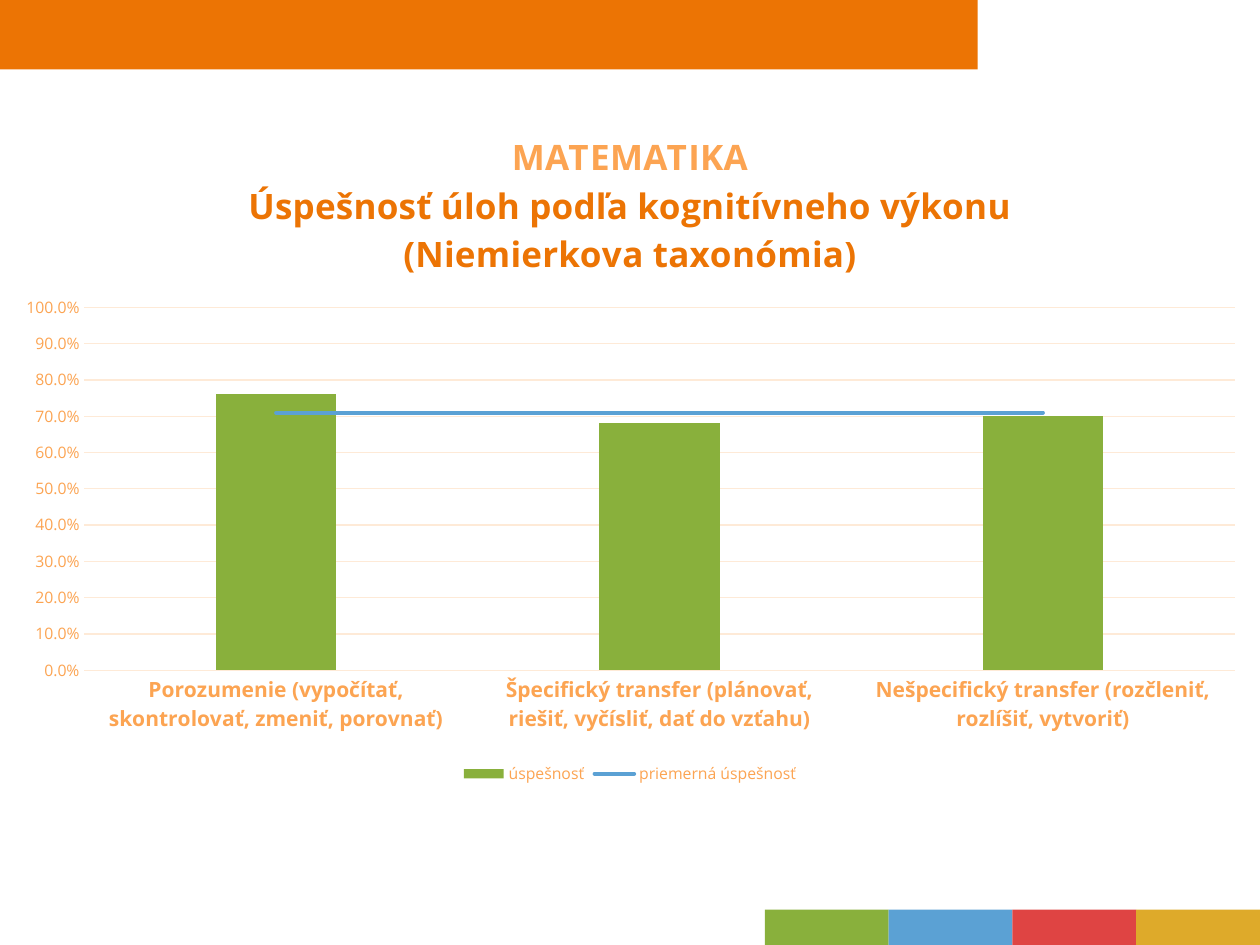
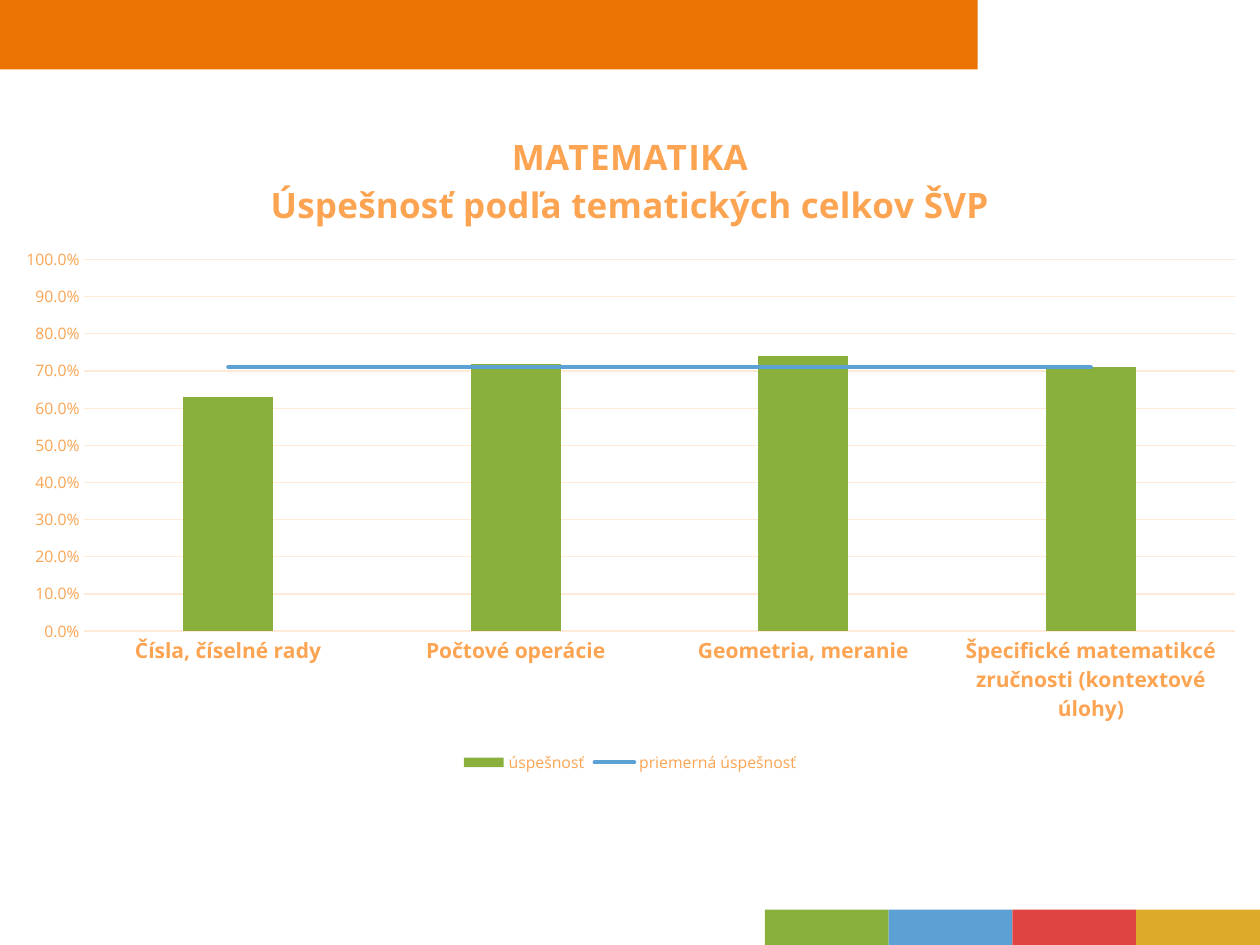
from lxml import etree
from pptx import Presentation
from pptx import util as u
from pptx.chart.data import CategoryChartData
from pptx.dml.color import RGBColor
from pptx.enum import chart as charts
from pptx.enum import shapes
from pptx.oxml import parse_xml
from pptx.oxml.ns import nsdecls, qn

COLORS = {
    "orange": "EC7404",
    "peach": "FCA452",
    "grid": "FEEAD7",
    "green": "89B03C",
    "blue": "5BA1D4",
    "red": "DF4443",
    "yellow": "DEAA2A",
}
FONT = "Open Sans"
PLOT_LEFT, PLOT_WIDTH = 0.67, 9.13
AVERAGE = 0.71

SLIDES = [
    {
        "box": (0, 0.84, 10, 5.43),
        "plot": (2.44, 2.88),
        "title": [("MATEMATIKA", "peach"),
                  ("Úspešnosť úloh podľa kognitívneho výkonu (Niemierkova taxonómia)", "orange")],
        "success": {
            "Porozumenie (vypočítať, skontrolovať, zmeniť, porovnať)": 0.76,
            "Špecifický transfer (plánovať, riešiť, vyčísliť, dať do vzťahu)": 0.68,
            "Nešpecifický transfer (rozčleniť, rozlíšiť, vytvoriť)": 0.70,
        },
    },
    {
        "box": (0, 0.84, 10, 5.34),
        "plot": (2.06, 2.95),
        "title": [("MATEMATIKA", "peach"),
                  ("Úspešnosť podľa tematických celkov ŠVP", "peach")],
        "success": {
            "Čísla, číselné rady": 0.63,
            "Počtové operácie": 0.72,
            "Geometria, meranie": 0.74,
            "Špecifické matematikcé zručnosti (kontextové úlohy)": 0.71,
        },
    },
]


def rgb(name):
    return RGBColor.from_string(COLORS[name])


def set_font(font, size, color, bold=False):
    font.name, font.size, font.bold = FONT, u.Pt(size), bold
    font.color.rgb = rgb(color)


def set_line(line, color, width):
    line.color.rgb = rgb(color)
    line.width = u.Pt(width)


def add_band(page, left, top, width, height, color):
    band = page.shapes.add_shape(shapes.MSO_SHAPE.RECTANGLE,
                                 *map(u.Inches, (left, top, width, height)))
    band.shadow.inherit = False
    band.fill.solid()
    band.fill.fore_color.rgb = rgb(color)
    band.line.fill.background()


def add_frame(page):
    """Draw the header band and the row of coloured footer tiles."""
    add_band(page, 0, 0, 7.76, 0.55, "orange")
    left, right = 6.07, 10
    tiles = ("green", "blue", "red", "yellow")
    width = (right - left) / len(tiles)
    for index, color in enumerate(tiles):
        add_band(page, left + index * width, 7.22, width, 0.28, color)


def remove_children(parent, tag):
    for child in parent.findall(qn(tag)):
        parent.remove(child)


def move_average_to_line(chart):
    """Turn the second column series into a line on the same axes."""
    columns = chart._chartSpace.find(".//" + qn("c:barChart"))
    average = columns.findall(qn("c:ser"))[1]
    line_plot = parse_xml(
        f'<c:lineChart {nsdecls("c")}><c:grouping val="standard"/>'
        '<c:varyColors val="0"/><c:marker val="1"/></c:lineChart>')
    remove_children(average, "c:invertIfNegative")
    line_plot.insert(2, average)
    for axis in columns.findall(qn("c:axId")):
        etree.SubElement(line_plot, qn("c:axId")).set("val", axis.get("val"))
    columns.addnext(line_plot)


def place_plot(chart, box, plot):
    """Fix the inner plot area, as fractions of the chart box."""
    left, top, width, height = box
    plot_top, plot_height = plot
    places = {"x": (PLOT_LEFT - left) / width, "y": (plot_top - top) / height,
              "w": PLOT_WIDTH / width, "h": plot_height / height}
    area = chart._chartSpace.find(".//" + qn("c:plotArea"))
    remove_children(area, "c:layout")
    values = "".join(f'<c:{key} val="{value:.4f}"/>' for key, value in places.items())
    area.insert(0, parse_xml(
        f'<c:layout {nsdecls("c")}><c:manualLayout><c:layoutTarget val="inner"/>'
        f'<c:xMode val="edge"/><c:yMode val="edge"/>{values}'
        '</c:manualLayout></c:layout>'))


def style_title(chart, lines):
    chart.has_title = True
    chart.chart_title.include_in_layout = False
    frame = chart.chart_title.text_frame
    for index, (words, color) in enumerate(lines):
        para = frame.paragraphs[0] if index == 0 else frame.add_paragraph()
        span = para.add_run()
        span.text = words
        set_font(para.font, 20, color, True)
        set_font(span.font, 20, color, True)


def style_axes(chart):
    categories, values = chart.category_axis, chart.value_axis
    for axis in (categories, values):
        axis.major_tick_mark = axis.minor_tick_mark = charts.XL_TICK_MARK.NONE
    set_font(categories.tick_labels.font, 12, "peach", True)
    set_line(categories.format.line, "grid", 0.75)
    set_font(values.tick_labels.font, 9, "peach")
    values.tick_labels.number_format = "0.0%"
    values.tick_labels.number_format_is_linked = False
    values.minimum_scale, values.maximum_scale, values.major_unit = 0, 1, 0.1
    values.format.line.fill.background()
    set_line(values.major_gridlines.format.line, "grid", 0.75)


def style_series(chart):
    columns, line_plot = chart.plots
    columns.gap_width, columns.overlap = 219, -27
    columns.vary_by_categories = False
    success, average = columns.series[0], line_plot.series[0]
    success.format.fill.solid()
    success.format.fill.fore_color.rgb = rgb("green")
    set_line(average.format.line, "blue", 2.25)
    average.format.line._get_or_add_ln().set("cap", "rnd")
    average.marker.style = charts.XL_MARKER_STYLE.NONE
    average.smooth = False


def add_success_chart(page, box, plot, title, success):
    data = CategoryChartData(number_format="0.0%")
    data.categories = list(success)
    data.add_series("úspešnosť", list(success.values()))
    data.add_series("priemerná úspešnosť", [AVERAGE] * len(success))
    chart = page.shapes.add_chart(charts.XL_CHART_TYPE.COLUMN_CLUSTERED,
                                  *map(u.Inches, box), data).chart
    set_font(chart.font, 10, "orange")
    move_average_to_line(chart)
    style_series(chart)
    style_axes(chart)
    style_title(chart, title)
    chart.has_legend = True
    chart.legend.position = charts.XL_LEGEND_POSITION.BOTTOM
    chart.legend.include_in_layout = False
    set_font(chart.legend.font, 9, "peach")
    place_plot(chart, box, plot)


def main():
    deck = Presentation()
    deck.slide_width, deck.slide_height = u.Inches(10), u.Inches(7.5)
    for content in SLIDES:
        page = deck.slides.add_slide(deck.slide_layouts[6])
        add_frame(page)
        add_success_chart(page, **content)
    deck.save("out.pptx")


if __name__ == "__main__":
    main()
